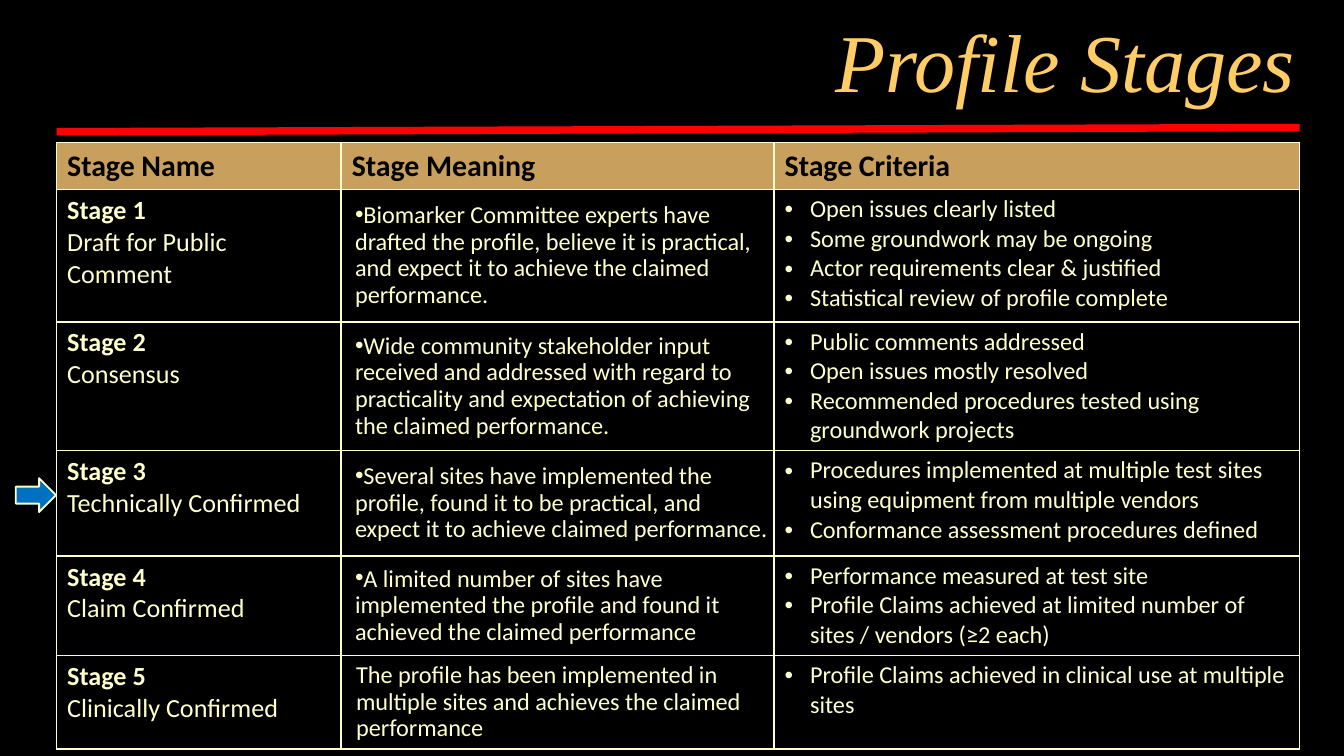
from typing import NamedTuple

from lxml.etree import SubElement
from pptx import Presentation
from pptx.dml.color import RGBColor
from pptx.enum.shapes import MSO_CONNECTOR, MSO_SHAPE
from pptx.enum.text import MSO_ANCHOR, PP_ALIGN
from pptx.oxml.ns import qn
from pptx.util import Cm, Pt

BLACK = RGBColor(0x00, 0x00, 0x00)
CREAM = RGBColor(0xFF, 0xFF, 0xCC)
GOLD = RGBColor(0xFF, 0xCC, 0x66)
TAN = RGBColor(0xC8, 0x9F, 0x5D)
RED = RGBColor(0xFF, 0x00, 0x00)
BLUE = RGBColor(0x00, 0x70, 0xC0)

LEFT, TOP = 1.07, 2.69
WIDTHS = (5.38, 8.18, 9.93)
HEAD = 0.89
HEADERS = ("Stage Name", "Stage Meaning", "Stage Criteria")


class Stage(NamedTuple):
    name: str
    meaning: str
    goals: tuple[str, ...]
    height: float
    dotted: bool = True


class Style(NamedTuple):
    size: int
    bold: bool = False
    color: RGBColor = CREAM
    bullet: bool = False
    margin: float = 0
    indent: float = 0
    spacing: float = 1.0


HEADING = Style(16, True, BLACK)
LABEL = Style(14, True)
NAME = Style(14)
MEANING = Style(13, bullet=True, margin=0.18, spacing=0.9)
PLAIN = Style(13, margin=0.03, spacing=0.9)
GOAL = Style(13, bullet=True, margin=0.48, indent=-0.48)

STAGES = (
    Stage("Draft for Public Comment",
          "Biomarker Committee experts have drafted the profile, believe it is "
          "practical, and expect it to achieve the claimed performance.",
          ("Open issues clearly listed",
           "Some groundwork may be ongoing",
           "Actor requirements clear & justified",
           "Statistical review of profile complete"), 2.5),
    Stage("Consensus",
          "Wide community stakeholder input received and addressed with regard to "
          "practicality and expectation of achieving the claimed performance.",
          ("Public comments addressed",
           "Open issues mostly resolved",
           "Recommended procedures tested using groundwork projects"), 2.43),
    Stage("Technically Confirmed",
          "Several sites have implemented the profile, found it to be practical, "
          "and expect it to achieve claimed performance.",
          ("Procedures implemented at multiple test sites using equipment from "
           "multiple vendors",
           "Conformance assessment procedures defined"), 1.99),
    Stage("Claim Confirmed",
          "A limited number of sites have implemented the profile and found it "
          "achieved the claimed performance",
          ("Performance measured at test site",
           "Profile Claims achieved at limited number of sites / vendors (≥2 each)"),
          1.88),
    Stage("Clinically Confirmed",
          "The profile has been implemented in multiple sites and achieves the "
          "claimed performance",
          ("Profile Claims achieved in clinical use at multiple sites",),
          1.76, False),
)


def border(cell) -> None:
    props = cell._tc.get_or_add_tcPr()
    for spot, side in enumerate(("lnL", "lnR", "lnT", "lnB")):
        line = SubElement(props, qn(f"a:{side}"), w=str(Pt(1)))
        fill = SubElement(line, qn("a:solidFill"))
        SubElement(fill, qn("a:srgbClr"), val=str(CREAM))
        props.insert(spot, line)


def write(cell, lines: list[tuple[str, Style]]) -> None:
    frame = cell.text_frame
    for spot, (text, style) in enumerate(lines):
        para = frame.add_paragraph() if spot else frame.paragraphs[0]
        para.line_spacing = style.spacing
        props = para._p.get_or_add_pPr()
        props.set("marL", str(Cm(style.margin)))
        props.set("indent", str(Cm(style.indent)))
        if style.bullet:
            SubElement(props, qn("a:buFont"), typeface="Arial")
            SubElement(props, qn("a:buChar"), char="•")
        run = para.add_run()
        run.text = text
        run.font.name = "Calibri"
        run.font.size = Pt(style.size)
        run.font.bold = style.bold
        run.font.color.rgb = style.color


def dress(cell, fill: RGBColor, side: float, edge: float) -> None:
    cell.fill.solid()
    cell.fill.fore_color.rgb = fill
    cell.margin_left = cell.margin_right = Cm(side)
    cell.margin_top = cell.margin_bottom = Cm(edge)
    border(cell)


def add_title(slide) -> None:
    title = slide.shapes.title
    title.left, title.top = Cm(3.15), Cm(0.48)
    title.width, title.height = Cm(21.59), Cm(1.75)
    frame = title.text_frame
    frame.vertical_anchor = MSO_ANCHOR.BOTTOM
    para = frame.paragraphs[0]
    para.alignment = PP_ALIGN.RIGHT
    para.line_spacing = 0.95
    run = para.add_run()
    run.text = "Profile Stages"
    run.font.name = "Times New Roman"
    run.font.size = Pt(44)
    run.font.italic = True
    run.font.color.rgb = GOLD


def add_grid(slide) -> None:
    heights = (HEAD, *(stage.height for stage in STAGES))
    table = slide.shapes.add_table(
        len(heights), len(WIDTHS), Cm(LEFT), Cm(TOP),
        Cm(sum(WIDTHS)), Cm(sum(heights))).table
    for column, width in zip(table.columns, WIDTHS):
        column.width = Cm(width)
    for row, height in zip(table.rows, heights):
        row.height = Cm(height)
    for spot, text in enumerate(HEADERS):
        cell = table.cell(0, spot)
        dress(cell, TAN, 0.2, 0.1)
        write(cell, [(text, HEADING)])
    for row, stage in enumerate(STAGES, 1):
        name, meaning, goals = (table.cell(row, col) for col in range(3))
        dress(name, BLACK, 0.2, 0.1)
        write(name, [(f"Stage {row}", LABEL), (stage.name, NAME)])
        dress(meaning, BLACK, *((0.08, 0.08) if stage.dotted else (0.25, 0.13)))
        meaning.vertical_anchor = MSO_ANCHOR.MIDDLE
        write(meaning, [(stage.meaning, MEANING if stage.dotted else PLAIN)])
        dress(goals, BLACK, 0.2, 0.1)
        write(goals, [(goal, GOAL) for goal in stage.goals])


def add_rule(slide) -> None:
    rule = slide.shapes.add_connector(
        MSO_CONNECTOR.STRAIGHT, Cm(LEFT), Cm(2.49), Cm(24.56), Cm(2.41))
    rule.line.color.rgb = RED
    rule.line.width = Pt(4)
    SubElement(rule._element.spPr, qn("a:effectLst"))


def add_arrow(slide) -> None:
    arrow = slide.shapes.add_shape(
        MSO_SHAPE.RIGHT_ARROW, Cm(0.3), Cm(9.04), Cm(0.76), Cm(0.64))
    arrow.shadow.inherit = False
    arrow.fill.solid()
    arrow.fill.fore_color.rgb = BLUE
    arrow.line.color.rgb = CREAM
    arrow.line.width = Pt(1)


def main() -> None:
    deck = Presentation()
    deck.slide_width, deck.slide_height = Cm(25.4), Cm(14.29)
    slide = deck.slides.add_slide(deck.slide_layouts[5])
    slide.background.fill.solid()
    slide.background.fill.fore_color.rgb = BLACK
    add_title(slide)
    add_grid(slide)
    add_rule(slide)
    add_arrow(slide)
    deck.save("out.pptx")


if __name__ == "__main__":
    main()
